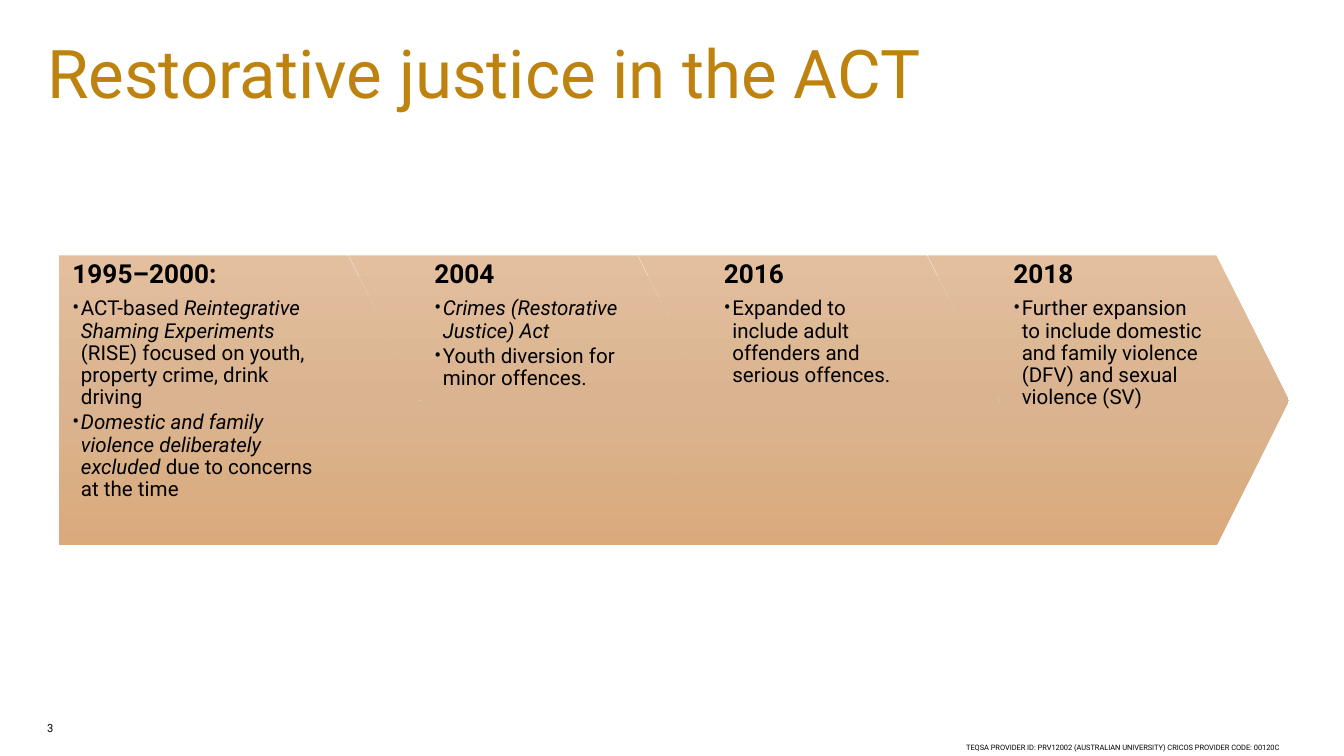
from copy import deepcopy

from lxml import etree
from pptx import Presentation
from pptx.dml.color import RGBColor
from pptx.enum.shapes import MSO_SHAPE
from pptx.enum.text import MSO_ANCHOR, MSO_AUTO_SIZE, PP_ALIGN
from pptx.oxml.ns import qn
from pptx.util import Cm, Pt

PLATE, CHEVRON = MSO_SHAPE.PENTAGON, MSO_SHAPE.CHEVRON
TOP, LEFT, NONE = MSO_ANCHOR.TOP, PP_ALIGN.LEFT, MSO_AUTO_SIZE.NONE
SHADES = ["E4BF9E", "DAB490", "DAAA7C"]
STEPS = [
    ("1995–2000:", [
        [("ACT-based ", False), ("Reintegrative Shaming Experiments", True),
         (" (RISE) focused on youth, property crime, drink driving", False)],
        [("Domestic and family violence deliberately excluded", True),
         (" due to concerns at the time", False)]]),
    ("2004", [
        [("Crimes (Restorative Justice) Act", True)],
        [("Youth diversion for minor offences.", False)]]),
    ("2016", [
        [("Expanded to include adult offenders and serious offences.", False)]]),
    ("2018", [
        [("Further expansion to include domestic and family violence (DFV) "
          "and sexual violence (SV)", False)]]),
]


def style(para, size, color="000000", bold=False):
    para.alignment = LEFT
    para.space_before = Pt(0)
    font = para.font
    font.name, font.size, font.bold = "Roboto", Pt(size), bold
    font.color.rgb = RGBColor.from_string(color)


def place(box, x, y, w, h, pads=(0, 0, 0, 0)):
    box.left, box.top, box.width, box.height = Cm(x), Cm(y), Cm(w), Cm(h)
    frame = box.text_frame
    frame.auto_size, frame.word_wrap = NONE, True
    frame.vertical_anchor = TOP
    frame.margin_left, frame.margin_top = Cm(pads[0]), Cm(pads[1])
    frame.margin_right, frame.margin_bottom = Cm(pads[2]), Cm(pads[3])
    return frame


deck = Presentation()
deck.slide_width, deck.slide_height = Cm(25.4), Cm(14.29)
slide = deck.slides.add_slide(deck.slide_layouts[4])
shapes = slide.shapes

title = place(shapes.title, 0.89, 0.89, 22.53, 2.26)
title.text = "Restorative justice in the ACT"
style(title.paragraphs[0], 36, "BE830E")
title.paragraphs[0].line_spacing = 0.8

left, top, wide, high, pitch = 1.12, 4.83, 6.83, 5.48, 5.47
for i, (year, points) in enumerate(STEPS):
    x = left + i * pitch
    arrow = shapes.add_shape(CHEVRON if i else PLATE,
                             Cm(x), Cm(top), Cm(wide), Cm(high))
    arrow.adjustments[0] = 0.25
    arrow.shadow.inherit = False
    arrow.line.fill.background()
    fill = arrow.fill
    fill.gradient()
    fill.gradient_angle = 270
    first = arrow._element.spPr.find(".//" + qn("a:gs"))
    first.addnext(deepcopy(first))
    for n, (stop, shade) in enumerate(zip(fill.gradient_stops, SHADES)):
        stop.position = n / 2
        stop.color.rgb = RGBColor.from_string(shade)

    box = slide.placeholders[i + 1]
    shapes._spTree.append(box._element)
    if i:
        frame = place(box, x + 1.37, top, 4.11, high, (0.25, 0.1, 0.25, 0.1))
    else:
        frame = place(box, x, top, 6.15, high, (0.25, 0.1, 0.97, 0.1))
    head = frame.paragraphs[0]
    head.text = year
    props = head._p.get_or_add_pPr()
    props.set("marL", "0")
    props.set("indent", "0")
    etree.SubElement(props, qn("a:buNone"))
    style(head, 14, bold=True)
    head.line_spacing, head.space_after = 0.9, Pt(4.9)
    for point in points:
        para = frame.add_paragraph()
        para.level = 1
        for text, slant in point:
            run = para.add_run()
            run.text = text
            run.font.italic = slant
        props = para._p.get_or_add_pPr()
        props.set("marL", str(Cm(0.16)))
        props.set("indent", str(-Cm(0.16)))
        etree.SubElement(props, qn("a:buFont")).set("typeface", "Roboto")
        etree.SubElement(props, qn("a:buChar")).set("char", "•")
        style(para, 11)
        para.line_spacing, para.space_after = 0.9, Pt(1.65)

notes = [
    ("3", 6, 0.89, 13.64, 0.99, 0.3),
    ("TEQSA PROVIDER ID: PRV12002 (AUSTRALIAN UNIVERSITY) "
     "CRICOS PROVIDER CODE: 00120C", 4, 18.26, 14.05, 9.17, 0.46),
]
for text, size, x, y, w, h in notes:
    frame = place(shapes.add_textbox(0, 0, 0, 0), x, y, w, h)
    frame.text = text
    style(frame.paragraphs[0], size)

deck.save("out.pptx")
